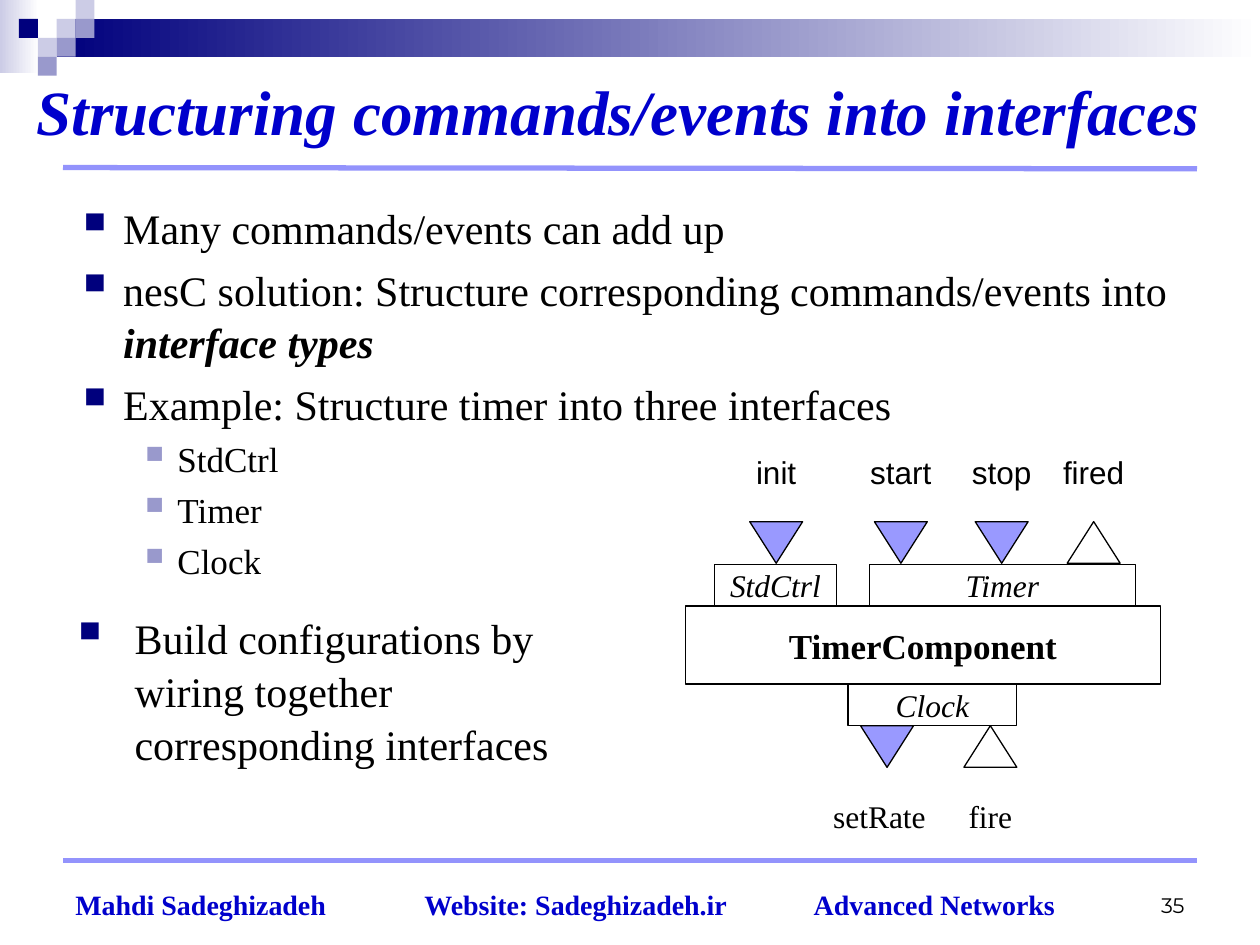
from lxml import etree
from pptx import Presentation
from pptx.dml.color import RGBColor
from pptx.enum.shapes import MSO_CONNECTOR, MSO_SHAPE
from pptx.enum.text import MSO_ANCHOR, MSO_AUTO_SIZE, PP_ALIGN
from pptx.oxml.ns import qn
from pptx.util import Inches, Pt

SERIF = "Times New Roman"
NAVY, BLUE, BLACK = "00007D", "0000CC", "000000"
PALE, LILAC, VIOLET, RULE = "CCCCE6", "9999CC", "9999FF", "9393FC"


def color(hex_string):
    return RGBColor.from_string(hex_string)


def format_font(font, size=18, name=SERIF, fill=BLACK, bold=False, italic=False):
    font.size, font.name = Pt(size), name
    font.color.rgb = color(fill)
    font.bold, font.italic = bold, italic


def write(shape, text, align=PP_ALIGN.LEFT, anchor=MSO_ANCHOR.TOP, wrap=True, **font):
    frame = shape.text_frame
    frame.auto_size = MSO_AUTO_SIZE.NONE
    frame.word_wrap, frame.vertical_anchor = wrap, anchor
    paragraph = frame.paragraphs[0]
    paragraph.alignment = align
    run = paragraph.add_run()
    run.text = text
    format_font(run.font, **font)
    return paragraph


def add_box(slide, left, top, width, height):
    return slide.shapes.add_textbox(*map(Inches, (left, top, width, height)))


def add_preset(slide, kind, left, top, width, height, fill=None, line=None):
    shape = slide.shapes.add_shape(kind, *map(Inches, (left, top, width, height)))
    shape.shadow.inherit = False
    if fill:
        shape.fill.solid()
        shape.fill.fore_color.rgb = color(fill)
    else:
        shape.fill.background()
    if line:
        shape.line.color.rgb = color(line)
        shape.line.width = Pt(0.75)
    else:
        shape.line.fill.background()
    return shape


def add_rule(slide, left, top, right, bottom):
    rule = slide.shapes.add_connector(
        MSO_CONNECTOR.STRAIGHT, *map(Inches, (left, top, right, bottom)))
    rule.line.color.rgb = color(RULE)
    rule.line.width = Pt(3)
    etree.SubElement(rule._element.spPr, qn("a:effectLst"))


def add_banner(slide, left, top, width):
    # Fading bars
    bars = [(0, 0, 0.31, 0.58, PALE), (0.45, 0.15, width - 0.45, 0.3, NAVY)]
    for x, y, bar_width, height, start in bars:
        bar = add_preset(slide, MSO_SHAPE.RECTANGLE, left + x, top + y, bar_width, height)
        bar.fill.gradient()
        bar.fill.gradient_angle = 0
        for stop, shade in zip(bar.fill.gradient_stops, (start, "FFFFFF")):
            stop.color.rgb = color(shade)
    # Mosaic of squares, by column and row
    side = 0.15
    squares = [(3, 1, PALE), (4, 0, PALE), (4, 1, LILAC), (2, 2, PALE),
               (1, 1, NAVY), (3, 2, LILAC), (2, 3, LILAC)]
    for column, row, fill in squares:
        add_preset(slide, MSO_SHAPE.RECTANGLE, left + column * side, top + row * side,
                   side, side, fill)


def add_title(slide, left, top, width, height):
    title = slide.shapes.title
    title.left, title.top = Inches(left), Inches(top)
    title.width, title.height = Inches(width), Inches(height)
    write(title, "Structuring commands/events into interfaces", anchor=MSO_ANCHOR.MIDDLE,
          size=36, fill=BLUE, bold=True, italic=True)


def add_bullets(slide, left, top, width, height, items, indents):
    """Items are (level, runs); each run is (text, emphasized)."""
    box = add_box(slide, left, top, width, height)
    frame = box.text_frame
    frame.word_wrap = True
    frame.margin_top = Inches(0.09)
    for index, (level, runs) in enumerate(items):
        paragraph = frame.paragraphs[0] if index == 0 else frame.add_paragraph()
        size, bullet_color = ((24, NAVY), (20, LILAC))[level]
        paragraph.level = level
        paragraph.line_spacing = 1.05
        paragraph.space_before = Pt(0.2 * size if index else 0)
        margin, hanging = indents[level]
        properties = paragraph._p.get_or_add_pPr()
        properties.set("marL", str(Inches(margin)))
        properties.set("indent", str(-Inches(hanging)))
        tint = etree.SubElement(properties, qn("a:buClr"))
        etree.SubElement(tint, qn("a:srgbClr"), val=bullet_color)
        etree.SubElement(properties, qn("a:buSzPct"), val="125000")
        etree.SubElement(properties, qn("a:buChar"), char="▪")
        for text, emphasized in runs:
            run = paragraph.add_run()
            run.text = text
            format_font(run.font, size=size, bold=emphasized, italic=emphasized)


def add_port(slide, center, top, is_command):
    """Commands point down and are filled; events point up and are open."""
    port = add_preset(slide, MSO_SHAPE.ISOSCELES_TRIANGLE, center - 0.21, top, 0.42, 0.33,
                      VIOLET if is_command else None, BLACK)
    port.rotation = 180 if is_command else 0


def add_diagram(slide, left, top):
    # Component and its interfaces
    blocks = [("TimerComponent", 0, 1.26, 3.77, 0.62, dict(size=20, bold=True)),
              ("StdCtrl", 0.23, 0.93, 0.97, 0.33, dict(italic=True)),
              ("Timer", 1.46, 0.93, 2.11, 0.33, dict(italic=True)),
              ("Clock", 1.29, 1.88, 1.34, 0.33, dict(italic=True))]
    for text, x, y, width, height, font in blocks:
        block = add_preset(slide, MSO_SHAPE.RECTANGLE, left + x, top + y, width, height,
                           line=BLACK)
        write(block, text, PP_ALIGN.CENTER, MSO_ANCHOR.MIDDLE, wrap=False, **font)
    # Ports with captions: text, caption center, port center, is command
    upper = [("init", 0.72, 0.72, True), ("start", 1.71, 1.71, True),
             ("stop", 2.51, 2.51, True), ("fired", 3.24, 3.24, False)]
    lower = [("setRate", 1.54, 1.6, True), ("fire", 2.42, 2.42, False)]
    for ports, port_top, caption_top, font_name in ((upper, 0.59, 0, "Arial"),
                                                    (lower, 2.21, 2.73, SERIF)):
        for text, caption_center, center, is_command in ports:
            add_port(slide, left + center, top + port_top, is_command)
            caption = add_box(slide, left + caption_center - 0.47, top + caption_top, 0.94, 0.4)
            write(caption, text, PP_ALIGN.CENTER, wrap=False, name=font_name)


def add_footer(slide, left, top, width, height):
    box = add_box(slide, left, top, width - 0.75, height)
    paragraph = write(box, "Mahdi Sadeghizadeh\tWebsite: Sadeghizadeh.ir\tAdvanced Networks",
                      anchor=MSO_ANCHOR.BOTTOM, size=16, fill=BLUE, bold=True)
    tabs = etree.SubElement(paragraph._p.get_or_add_pPr(), qn("a:tabLst"))
    for position in (2.77, 5.86):
        etree.SubElement(tabs, qn("a:tab"), pos=str(Inches(position)), algn="l")
    number = add_box(slide, left + width - 2.33, top - 0.03, 2.33, height)
    write(number, "35", PP_ALIGN.RIGHT, MSO_ANCHOR.BOTTOM, size=12, name="Montserrat")


def main():
    presentation = Presentation()
    presentation.slide_width, presentation.slide_height = Inches(10), Inches(7.5)
    slide = presentation.slides.add_slide(presentation.slide_layouts[5])

    add_banner(slide, 0, 0, 10)
    add_title(slide, 0.19, 0.25, 9.81, 1.25)
    add_rule(slide, 0.5, 1.33, 9.5, 1.34)
    add_rule(slide, 0.5, 6.83, 9.5, 6.83)

    add_bullets(slide, 0.5, 1.5, 9, 3.17, [
        (0, [("Many commands/events can add up", False)]),
        (0, [("nesC solution: Structure corresponding commands/events into ", False),
             ("interface types", True)]),
        (0, [("Example: Structure timer into three interfaces", False)]),
        *((1, [(name, False)]) for name in ("StdCtrl", "Timer", "Clock")),
    ], [(0.38, 0.38), (0.81, 0.31)])
    add_bullets(slide, 0.46, 4.75, 4.68, 2.05, [
        (0, [("Build configurations by wiring together corresponding interfaces", False)]),
    ], [(0.51, 0.51)])

    add_diagram(slide, 5.44, 3.55)
    add_footer(slide, 0.5, 6.86, 9, 0.5)
    presentation.save("out.pptx")


if __name__ == "__main__":
    main()
